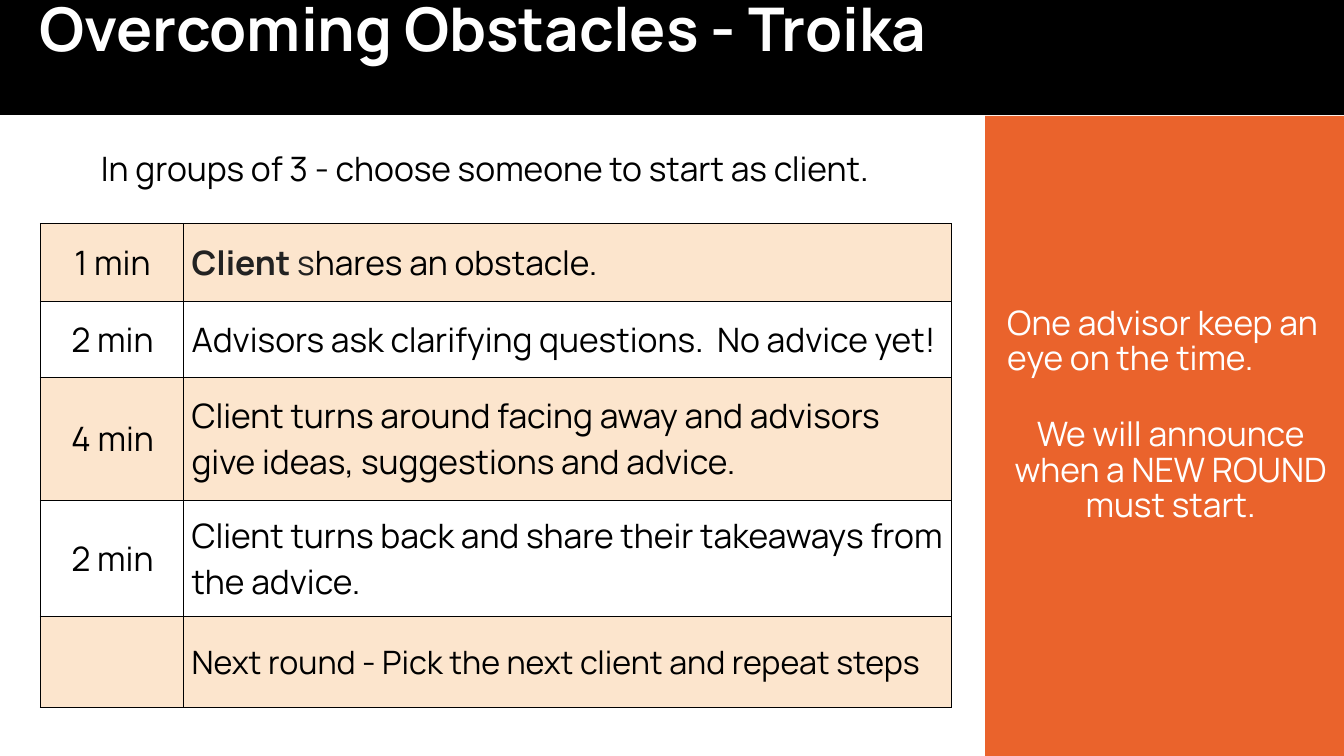
from pptx import Presentation
from pptx.dml.color import RGBColor
from pptx.enum.shapes import MSO_SHAPE
from pptx.enum.text import MSO_ANCHOR, MSO_AUTO_SIZE, PP_ALIGN
from pptx.oxml import parse_xml
from pptx.oxml.ns import nsdecls
from pptx.util import Inches, Pt

BLACK = RGBColor(0x00, 0x00, 0x00)
WHITE = RGBColor(0xFF, 0xFF, 0xFF)
CHARCOAL = RGBColor(0x22, 0x22, 0x22)
ORANGE = RGBColor(0xEA, 0x63, 0x2C)
PEACH = RGBColor(0xFC, 0xE5, 0xCD)
FONT = "Manrope"

COL_WIDTHS = [1.42, 7.62]
# Row height, time, step as (text, colour, bold, size) runs
STEPS = [
    (0.77, "1 min", [("Client ", CHARCOAL, True, 24), ("s", CHARCOAL, False, 24),
                     ("hares an obstacle.", BLACK, False, 24)]),
    (0.75, "2 min", [("Advisors ask clarifying questions.  No advice yet!",
                      BLACK, False, 24)]),
    (1.23, "4 min", [("Client turns around facing away and advisors give ideas, "
                      "suggestions and advice.", BLACK, False, 24)]),
    (1.15, "2 min", [("Client turns back and share their takeaways from the advice.",
                      BLACK, False, 24)]),
    (0.9, "", [("Next round - Pick the next client and repeat steps",
                BLACK, False, 23)]),
]


def style(font, color, size=24, bold=False):
    font.name, font.size, font.bold = FONT, Pt(size), bold
    font.color.rgb = color


def add_panel(slide, left, top, width, height, color):
    sp = slide.shapes.add_shape(MSO_SHAPE.RECTANGLE, Inches(left), Inches(top),
                                Inches(width), Inches(height))
    sp.fill.solid()
    sp.fill.fore_color.rgb = color
    sp.line.fill.background()
    sp.shadow.inherit = False
    return sp


def add_header(slide, left, top, width, height):
    band = add_panel(slide, left, top, width, height, BLACK)
    title = slide.shapes.title
    band._element.addnext(title._element)  # title in front of the band
    title.left, title.top = Inches(left + 0.29), Inches(top)
    title.width, title.height = Inches(10.85), Inches(0.64)
    tf = title.text_frame
    tf.text = "Overcoming Obstacles - Troika"
    tf.auto_size = MSO_AUTO_SIZE.NONE
    tf.vertical_anchor = MSO_ANCHOR.TOP
    p = tf.paragraphs[0]
    p.alignment = PP_ALIGN.LEFT
    p.line_spacing = 0.8
    style(p.runs[0].font, WHITE, 43, True)


def add_intro(slide, left, top, width, height):
    sp = slide.shapes.add_textbox(Inches(left), Inches(top),
                                  Inches(width), Inches(height))
    tf = sp.text_frame
    tf.word_wrap = True
    tf.margin_left = tf.margin_right = Inches(0.07)
    tf.margin_top = tf.margin_bottom = Inches(0.07)
    tf.text = "In groups of 3 - choose someone to start as client."
    style(tf.paragraphs[0].runs[0].font, BLACK)


def add_sidebar(slide, left, top, width, height):
    sp = add_panel(slide, left, top, width, height, ORANGE)
    tf = sp.text_frame
    tf.word_wrap = True
    tf.vertical_anchor = MSO_ANCHOR.MIDDLE
    tf.margin_left, tf.margin_right = Inches(0.22), Inches(0.1)
    tf.margin_top, tf.margin_bottom = Inches(0.05), Inches(0.45)
    tf.text = ("One advisor keep an eye on the time.\n"
               "We will announce\nwhen a NEW ROUND must start.")
    for i, p in enumerate(tf.paragraphs):
        p.alignment = PP_ALIGN.CENTER if i else PP_ALIGN.LEFT
        p.line_spacing = 0.88
        style(p.runs[0].font, WHITE)
    tf.paragraphs[1].space_before = Pt(29)


def add_borders(cell):
    tcPr = cell._tc.get_or_add_tcPr()
    for i, side in enumerate(("lnL", "lnR", "lnT", "lnB")):
        tcPr.insert(i, parse_xml(
            f'<a:{side} {nsdecls("a")} w="{Pt(0.75)}"><a:solidFill>'
            f'<a:srgbClr val="{BLACK}"/></a:solidFill></a:{side}>'))


def fill_cell(cell, runs, align, shaded):
    cell.vertical_anchor = MSO_ANCHOR.MIDDLE
    cell.margin_left, cell.margin_right = Inches(0.08), Inches(0.07)
    cell.margin_top = cell.margin_bottom = Inches(0.08)
    if shaded:
        cell.fill.solid()
        cell.fill.fore_color.rgb = PEACH
    else:
        cell.fill.background()
    add_borders(cell)
    p = cell.text_frame.paragraphs[0]
    p.alignment = align
    for text, color, bold, size in runs:
        r = p.add_run()
        r.text = text
        style(r.font, color, size, bold)


def add_steps(slide, left, top):
    width, height = sum(COL_WIDTHS), sum(step[0] for step in STEPS)
    table = slide.shapes.add_table(len(STEPS), 2, Inches(left), Inches(top),
                                   Inches(width), Inches(height)).table
    table.first_row = table.horz_banding = False
    for column, col_width in zip(table.columns, COL_WIDTHS):
        column.width = Inches(col_width)
    for i, (row_height, time, runs) in enumerate(STEPS):
        table.rows[i].height = Inches(row_height)
        shaded = i % 2 == 0
        time_runs = [(time, BLACK, False, 24)] if time else []
        fill_cell(table.cell(i, 0), time_runs, PP_ALIGN.CENTER, shaded)
        fill_cell(table.cell(i, 1), runs, PP_ALIGN.LEFT, shaded)


def main():
    prs = Presentation()
    prs.slide_width, prs.slide_height = Inches(13.33), Inches(7.5)
    slide = prs.slides.add_slide(prs.slide_layouts[5])
    add_header(slide, 0, 0, 13.33, 1.14)
    add_intro(slide, 0.93, 1.4, 7.98, 0.64)
    add_sidebar(slide, 9.77, 1.15, 3.56, 6.35)
    add_steps(slide, 0.4, 2.22)
    prs.save("out.pptx")


if __name__ == "__main__":
    main()
